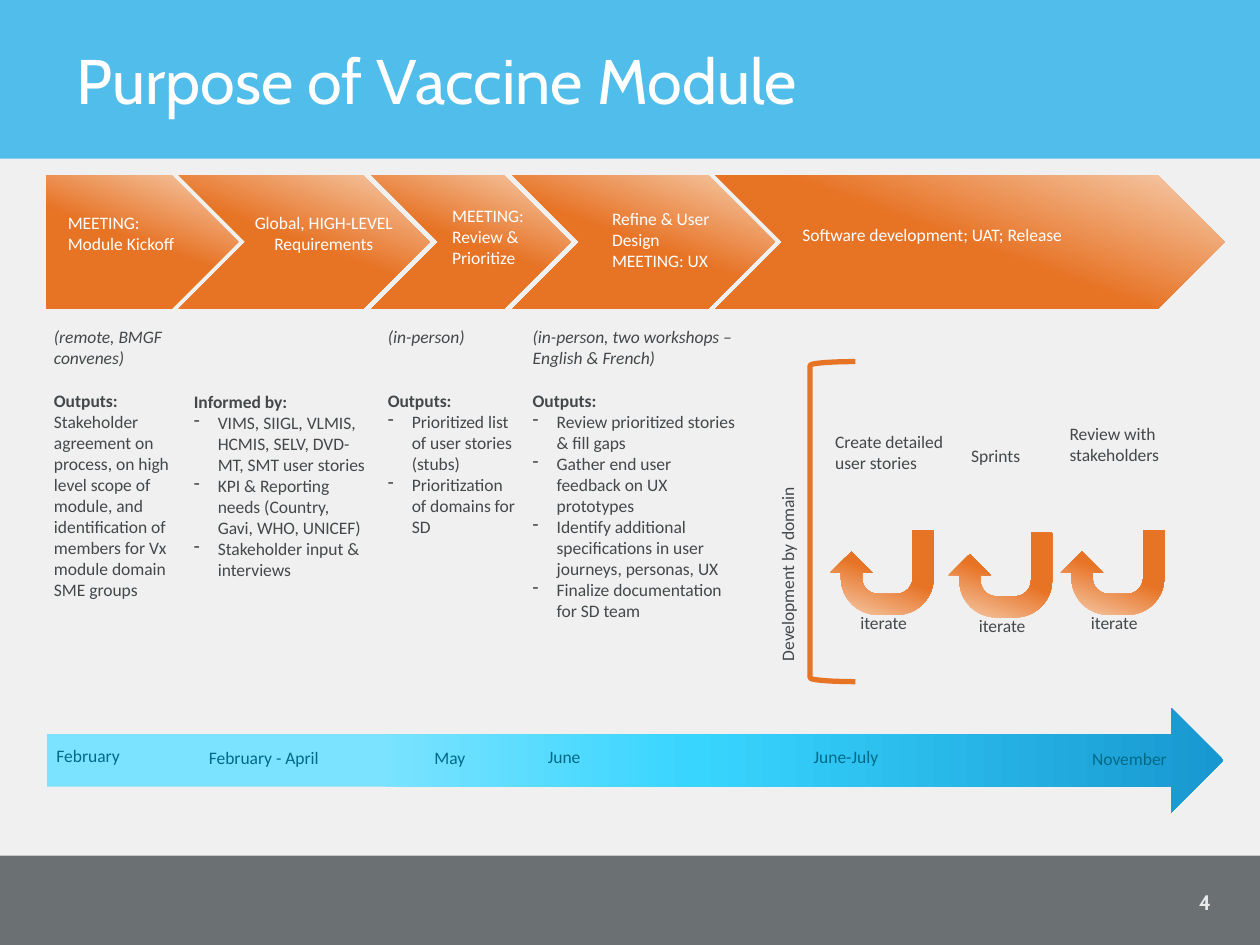
from lxml import etree
from pptx import Presentation
from pptx.dml.color import RGBColor
from pptx.enum.shapes import MSO_SHAPE as SHAPE
from pptx.enum.text import MSO_ANCHOR as ANCHOR, PP_ALIGN as ALIGN
from pptx.oxml.ns import qn
from pptx.util import Inches, Pt

WHITE = RGBColor(0xFF, 0xFF, 0xFF)
SKY = RGBColor(0x51, 0xBD, 0xEB)
SLATE = RGBColor(0x6B, 0x71, 0x73)
PALE = RGBColor(0xF0, 0xF0, 0xF0)
PAGE_GREY = RGBColor(0xEB, 0xEB, 0xEB)
INK = RGBColor(0x44, 0x48, 0x4A)
TEAL = RGBColor(0x00, 0x6A, 0x86)
ORANGE = RGBColor(0xE7, 0x73, 0x25)
PEACH = RGBColor(0xF6, 0xCE, 0xAF)
AQUA = RGBColor(0x7B, 0xE3, 0xFF)
CYAN = RGBColor(0x38, 0xD5, 0xFF)
BLUE = RGBColor(0x18, 0x98, 0xD0)

WARM = ([(0, PEACH), (51, ORANGE)], 110)
COOL = ([(28, AQUA), (55, CYAN), (100, BLUE)], 0)
LINE = 12.2

STAGES = [
    (0, 1.52, SHAPE.PENTAGON, 0.07, 0.24, 1.16, ALIGN.LEFT,
     ["MEETING:", "Module Kickoff"]),
    (1.05, 1.99, SHAPE.CHEVRON, 1.27, 0.24, 1.86, ALIGN.CENTER,
     ["Global, HIGH-LEVEL", "Requirements"]),
    (2.58, 1.58, SHAPE.CHEVRON, 3.12, 0.19, 1.11, ALIGN.LEFT,
     ["MEETING:", "Review &", "Prioritize"]),
    (3.7, 2.08, SHAPE.CHEVRON, 4.39, 0.21, 1.17, ALIGN.LEFT,
     ["Refine & User", "Design", "MEETING: UX"]),
    (5.31, 4.04, SHAPE.CHEVRON, 5.9, 0.34, 2.5, ALIGN.LEFT,
     ["Software development; UAT; Release"]),
]
COLUMNS = [
    (0.33, 2.54, 1.29, 3.52, "(remote, BMGF convenes)", LINE, "Outputs:", False,
     ["Stakeholder agreement on process, on high level scope of module, and "
      "identification of members for Vx module domain SME groups"]),
    (1.44, 3.05, 1.58, 1.78, None, 0, "Informed by:", True,
     ["VIMS, SIIGL, VLMIS, HCMIS, SELV, DVD-MT, SMT user stories",
      "KPI & Reporting needs (Country, Gavi, WHO, UNICEF)",
      "Stakeholder input & interviews"]),
    (2.98, 2.54, 1.23, 2.12, "(in-person)", 2 * LINE, "Outputs:", True,
     ["Prioritized list of user stories (stubs)",
      "Prioritization of domains for SD"]),
    (4.13, 2.54, 1.83, 4.72, "(in-person, two workshops – English & French)", LINE,
     "Outputs:", True,
     ["Review prioritized stories & fill gaps",
      "Gather end user feedback on UX prototypes",
      "Identify additional specifications in user journeys, personas, UX",
      "Finalize documentation for SD team"]),
]
STEPS = [
    (0.1, 0.5, 1.18, "Create detailed user stories"),
    (1.18, 0.61, 1.03, "Sprints"),
    (1.96, 0.44, 1.25, "Review with stakeholders"),
]
LOOPS = [(0.16, 1.34), (1.1, 1.36), (1.99, 1.34)]
MONTHS = [
    (-0.02, 0.24, "February"), (1.19, 0.26, "February - April"),
    (2.98, 0.26, "May"), (3.88, 0.25, "June"),
    (5.99, 0.25, "June-July"), (8.2, 0.27, "November"),
]


def set_gradient(sp, stops, angle):
    sp.fill.gradient()
    grad = sp._element.spPr.find(qn("a:gradFill"))
    stop_list = grad.find(qn("a:gsLst"))
    for old in list(stop_list):
        stop_list.remove(old)
    for pos, color in stops:
        stop = etree.SubElement(stop_list, qn("a:gs"), pos=str(pos * 1000))
        etree.SubElement(stop, qn("a:srgbClr"), val=str(color))
    grad.find(qn("a:lin")).set("ang", str(angle * 60000))


def add_shape(s, kind, x, y, w, h, color=None, gradient=None, rotation=0):
    sp = s.shapes.add_shape(kind, Inches(x), Inches(y), Inches(w), Inches(h))
    sp.shadow.inherit = False
    sp.line.fill.background()
    sp.rotation = rotation
    if gradient:
        set_gradient(sp, *gradient)
    elif color:
        sp.fill.solid()
        sp.fill.fore_color.rgb = color
    else:
        sp.fill.background()
    return sp


def add_par(tf, text, size=10, color=INK, font="Calibri", bold=False, italic=False,
            align=ALIGN.LEFT, before=0, spacing=None, bullet=False):
    p = tf.paragraphs[0] if not tf.paragraphs[0].runs else tf.add_paragraph()
    p.alignment = align
    if before:
        p.space_before = Pt(before)
    if spacing:
        p.line_spacing = Pt(spacing)
    if bullet:
        pPr = p._p.get_or_add_pPr()
        pPr.set("marL", str(Inches(0.19)))
        pPr.set("indent", str(Inches(-0.19)))
        etree.SubElement(pPr, qn("a:buChar"), char="-")
    r = p.add_run()
    r.text = text
    r.font.name, r.font.size = font, Pt(size)
    r.font.bold, r.font.italic = bold, italic
    r.font.color.rgb = color


def add_text(s, x, y, w, h, lines, anchor=ANCHOR.TOP, rotation=0, **fmt):
    box = s.shapes.add_textbox(Inches(x), Inches(y), Inches(w), Inches(h))
    box.rotation = rotation
    tf = box.text_frame
    tf.word_wrap = True
    tf.vertical_anchor = anchor
    for line in lines:
        add_par(tf, line, **fmt)
    return tf


def add_header(s, x, y, w, h):
    add_shape(s, SHAPE.RECTANGLE, x, y, w, h, SKY)
    add_text(s, x + 0.51, y + 0.09, 8.59, 1.17, ["Purpose of Vaccine Module"],
             anchor=ANCHOR.MIDDLE, size=36, font="Cabin", color=WHITE, spacing=37.2)


def add_footer(s, x, y, w, h):
    add_shape(s, SHAPE.RECTANGLE, x, y, w, h, SLATE)
    add_text(s, x + 8.92, y + 0.17, 0.79, 0.4, ["4"], anchor=ANCHOR.MIDDLE,
             size=12, font="Cabin", color=PAGE_GREY, bold=True, align=ALIGN.RIGHT)


def add_stages(s, x, y, h):
    for dx, w, kind, text_dx, text_dy, text_w, align, lines in STAGES:
        add_shape(s, kind, x + dx, y, w, h, gradient=WARM)
        add_text(s, x + text_dx, y + text_dy, text_w, 0.6, lines,
                 color=WHITE, align=align)


def add_column(s, x, y, w, h, note, gap, heading, bullet, items):
    tf = add_text(s, x, y, w, h, [note] if note else [], italic=True)
    add_par(tf, heading, bold=True, before=gap)
    for item in items:
        add_par(tf, item, bullet=bullet)


def add_development(s, x, y, h):
    bracket = add_shape(s, SHAPE.LEFT_BRACKET, x, y, 0.36, h)
    bracket.line.color.rgb = ORANGE
    bracket.line.width = Pt(3)
    add_text(s, x - 1.6, y + 0.87, 2.89, 0.32, ["Development by domain"], rotation=270)
    for dx, dy, w, label in STEPS:
        add_text(s, x + dx, y + dy, w, 0.52, [label])
    for dx, dy in LOOPS:
        add_shape(s, SHAPE.U_TURN_ARROW, x + dx, y + dy, 0.82, 0.67,
                  gradient=WARM, rotation=180)
        add_text(s, x + dx + 0.14, y + dy + 0.6, 0.74, 0.32, ["iterate"])


def add_timeline(s, x, y, w, h):
    add_shape(s, SHAPE.RIGHT_ARROW, x, y, w, h, gradient=COOL)
    for dx, dy, month in MONTHS:
        add_text(s, x + dx, y + dy, 1.86, 0.32, [month], color=TEAL)


def main():
    prs = Presentation()
    prs.slide_width, prs.slide_height = Inches(10), Inches(7.5)
    s = prs.slides.add_slide(prs.slide_layouts[6])
    add_shape(s, SHAPE.RECTANGLE, 0, 1.26, 10, 5.53, PALE)
    add_header(s, 0, 0, 10, 1.26)
    add_footer(s, 0, 6.79, 10, 0.71)
    add_stages(s, 0.37, 1.39, 1.06)
    for column in COLUMNS:
        add_column(s, *column)
    add_development(s, 6.43, 2.87, 2.54)
    add_timeline(s, 0.37, 5.62, 9.34, 0.83)
    prs.save("out.pptx")


if __name__ == "__main__":
    main()
